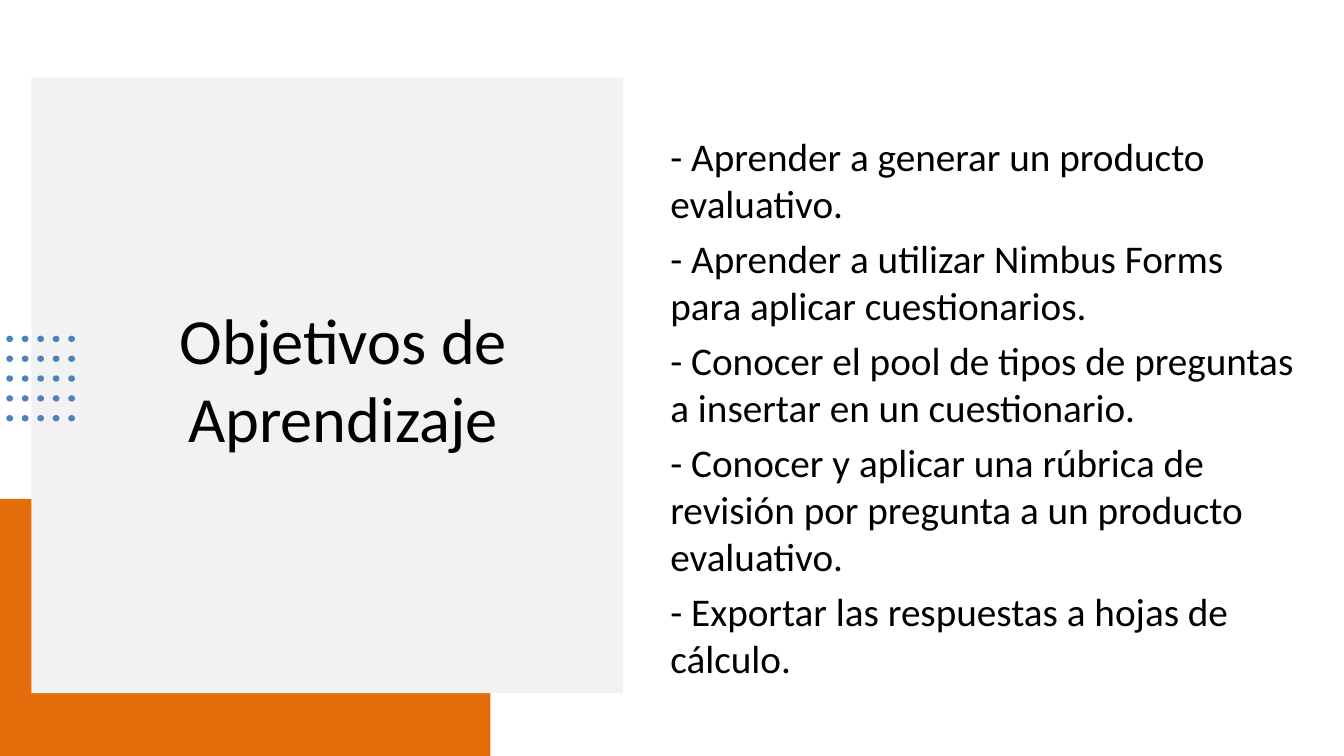
"""Build the learning goals slide."""
from itertools import product

from lxml import etree
from pptx import Presentation
from pptx import util as u
from pptx.dml.color import RGBColor
from pptx.enum import shapes, text
from pptx.oxml.ns import qn

BLACK = RGBColor(0x00, 0x00, 0x00)
ORANGE = RGBColor(0xE4, 0x6C, 0x0A)
GRAY = RGBColor(0xF2, 0xF2, 0xF2)
BLUE = RGBColor(0x4F, 0x81, 0xBD)
GOALS = [
    "- Aprender a generar un producto evaluativo.",
    "- Aprender a utilizar Nimbus Forms para aplicar cuestionarios.",
    "- Conocer el pool de tipos de preguntas a insertar en un cuestionario.",
    "- Conocer y aplicar una rúbrica de revisión por pregunta a un producto evaluativo.",
    "- Exportar las respuestas a hojas de cálculo.",
]


def write(para, words, size, font="Calibri", color=BLACK, align=text.PP_ALIGN.LEFT, before=0):
    """Put words in a paragraph with the given format."""
    run = para.add_run()
    run.text = words
    run.font.size = u.Pt(size)
    run.font.name = font
    run.font.color.rgb = color
    para.alignment = align
    para.space_before = u.Pt(before)
    props = para._p.get_or_add_pPr()
    props.set("marL", "0")
    props.set("indent", "0")
    etree.SubElement(props, qn("a:buNone"))


class Page:
    """Hold the slide and draw its parts."""

    def __init__(self, deck):
        """Add a slide with a title and a body."""
        self.slide = deck.slides.add_slide(deck.slide_layouts[1])

    def shape(self, kind, box, fill, home=None):
        """Draw a plain filled shape."""
        item = (home or self.slide).shapes.add_shape(kind, *map(u.Cm, box))
        item.shadow.inherit = False
        item.fill.solid()
        item.fill.fore_color.rgb = fill
        item.line.fill.background()

    def dots(self, left, top, step_x, step_y, count):
        """Draw a square grid of dots as one group."""
        group = self.slide.shapes.add_group_shape()
        for col, row in product(range(count), repeat=2):
            box = (left + col * step_x, top + row * step_y, 0.17, 0.16)
            self.shape(shapes.MSO_SHAPE.OVAL, box, BLUE, group)

    def fill(self, index, box, lines, **style):
        """Place a template text holder in front and fill it."""
        item = self.slide.placeholders[index]
        item.left, item.top, item.width, item.height = map(u.Cm, box)
        item.element.getparent().append(item.element)
        frame = item.text_frame
        frame.word_wrap = True
        frame.auto_size = text.MSO_AUTO_SIZE.NONE
        frame.vertical_anchor = text.MSO_ANCHOR.MIDDLE
        for num, words in enumerate(lines):
            para = frame.add_paragraph() if num else frame.paragraphs[0]
            write(para, words, **style)


def main():
    """Build and save the deck."""
    deck = Presentation()
    deck.slide_width, deck.slide_height = u.Cm(33.87), u.Cm(19.05)
    page = Page(deck)
    rect = shapes.MSO_SHAPE.RECTANGLE
    page.shape(rect, (0, 12.57, 12.36, 6.48), ORANGE)
    page.shape(rect, (0.79, 1.96, 14.91, 15.51), GRAY)
    page.fill(0, (2.82, 3.73, 11.66, 11.58), ["Objetivos de Aprendizaje"],
              size=46, align=text.PP_ALIGN.CENTER)
    page.dots(0.16, 8.46, 0.39, 0.5, 5)
    page.fill(1, (16.64, 2.57, 16.43, 15.37), GOALS, size=28, before=5.6)
    deck.save("out.pptx")


if __name__ == "__main__":
    main()
